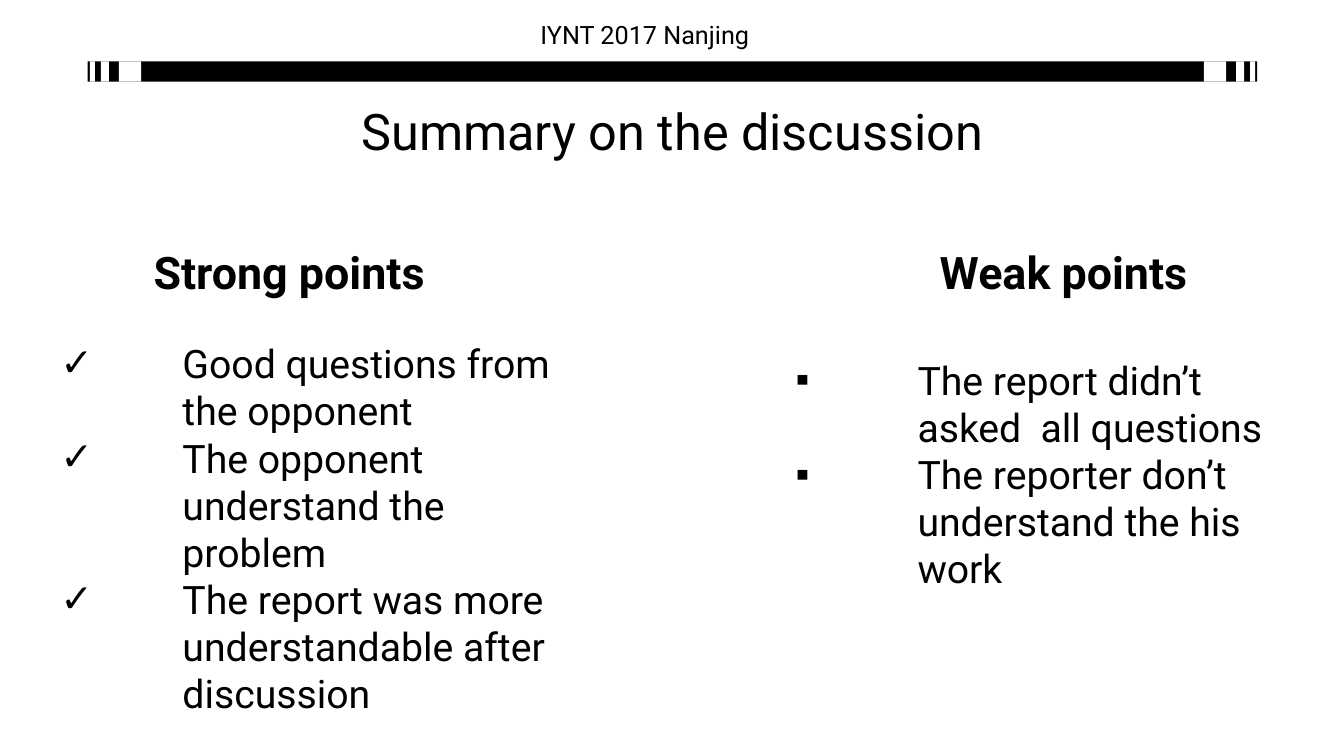
import pptx
import pptx.dml.color
import pptx.enum.shapes
import pptx.enum.text
import pptx.oxml
import pptx.oxml.ns
import pptx.util

Inches = pptx.util.Inches
Pt = pptx.util.Pt
ALIGN = pptx.enum.text.PP_ALIGN
ANCHOR = pptx.enum.text.MSO_ANCHOR
BLACK = pptx.dml.color.RGBColor(0x00, 0x00, 0x00)
WHITE = pptx.dml.color.RGBColor(0xFF, 0xFF, 0xFF)
FONT = "Roboto"
INSET = 0.05
LIST_INDENT = 1.21


def place(part, left, top, width, height):
    part.left, part.top = Inches(left), Inches(top)
    part.width, part.height = Inches(width), Inches(height)


def write(part, lines, size, bold=False, align=ALIGN.LEFT, anchor=ANCHOR.TOP,
          wrap=True, spacing=1.0, top_inset=INSET, bullet=None):
    """Fill a text part with one paragraph per line, optionally bulleted."""
    frame = part.text_frame
    frame.text = "\n".join(lines)
    frame.auto_size = pptx.enum.text.MSO_AUTO_SIZE.NONE
    frame.word_wrap = wrap
    frame.vertical_anchor = anchor
    frame.margin_left = frame.margin_right = frame.margin_bottom = Inches(INSET)
    frame.margin_top = Inches(top_inset)
    for paragraph in frame.paragraphs:
        paragraph.alignment = align
        paragraph.line_spacing = spacing
        paragraph.space_before = paragraph.space_after = Pt(0)
        if bullet:
            add_bullet(paragraph, bullet)
        for run in paragraph.runs:
            run.font.name = FONT
            run.font.size = Pt(size)
            run.font.bold = bold
            run.font.color.rgb = BLACK


def add_bullet(paragraph, bullet):
    properties = paragraph._p.get_or_add_pPr()
    properties.set("marL", str(Inches(LIST_INDENT)))
    properties.set("indent", str(-Inches(LIST_INDENT)))
    namespace = pptx.oxml.ns.nsdecls("a")
    properties.append(pptx.oxml.parse_xml(f'<a:buFont {namespace} typeface="Arial"/>'))
    properties.append(pptx.oxml.parse_xml(f'<a:buChar {namespace} char="{bullet}"/>'))


def add_block(slide, color, left, top, width, height):
    block = slide.shapes.add_shape(
        pptx.enum.shapes.MSO_SHAPE.RECTANGLE,
        Inches(left), Inches(top), Inches(width), Inches(height))
    block.shadow.inherit = False
    block.fill.solid()
    block.fill.fore_color.rgb = color
    block.line.fill.background()


def add_striped_bar(slide, left, top, width, height):
    """Black bar with white stripes mirrored at both ends."""
    add_block(slide, BLACK, left, top, width, height)
    for offset, stripe in ((0.02, 0.05), (0.13, 0.08), (0.31, 0.22)):
        for stripe_left in (left + offset, left + width - offset - stripe):
            add_block(slide, WHITE, stripe_left, top, stripe, height)


def add_event_name(slide, left, top, width, height):
    event_name = slide.shapes.add_textbox(
        Inches(left), Inches(top), Inches(width), Inches(height))
    write(event_name, ["IYNT 2017 Nanjing"], 18, wrap=False)


def fill_title(title, left, top, width, height):
    place(title, left, top, width, height)
    write(title, ["Summary on the discussion"], 36, align=ALIGN.CENTER,
          anchor=ANCHOR.MIDDLE, spacing=0.9)


def fill_heading(heading, text, left, top, width, height):
    place(heading, left, top, width, height)
    write(heading, [text], 32, bold=True, align=ALIGN.CENTER, wrap=False)


def fill_points(points, lines, bullet, top_inset, left, top, width, height):
    place(points, left, top, width, height)
    write(points, lines, 28, bullet=bullet, top_inset=top_inset)


def build_summary_slide(deck):
    slide = deck.slides.add_slide(deck.slide_layouts.get_by_name("Comparison"))
    title, strong_heading, strong_points, weak_heading, weak_points = [
        part for part in slide.placeholders if part.placeholder_format.idx < 10]
    add_striped_bar(slide, 0.87, 0.61, 11.6, 0.2)
    add_event_name(slide, 5.31, 0.14, 2.22, 0.41)
    fill_title(title, 0.92, 0.83, 11.5, 1.01)
    fill_heading(strong_heading, "Strong points", 1.37, 2.38, 3, 0.63)
    fill_heading(weak_heading, "Weak points", 9.19, 2.38, 2.72, 0.63)
    fill_points(strong_points, [
        "Good questions from the opponent",
        "The opponent understand the problem",
        "The report was more understandable after discussion",
    ], "✓", 0.36, 0.55, 3.01, 5.17, 4.4)
    fill_points(weak_points, [
        "The report didn’t asked  all questions",
        "The reporter don’t  understand the his work",
    ], "▪", 0.52, 7.84, 3.01, 5.24, 3.87)


def main():
    deck = pptx.Presentation()
    deck.slide_width, deck.slide_height = Inches(13.33), Inches(7.5)
    build_summary_slide(deck)
    deck.save("out.pptx")


if __name__ == "__main__":
    main()
